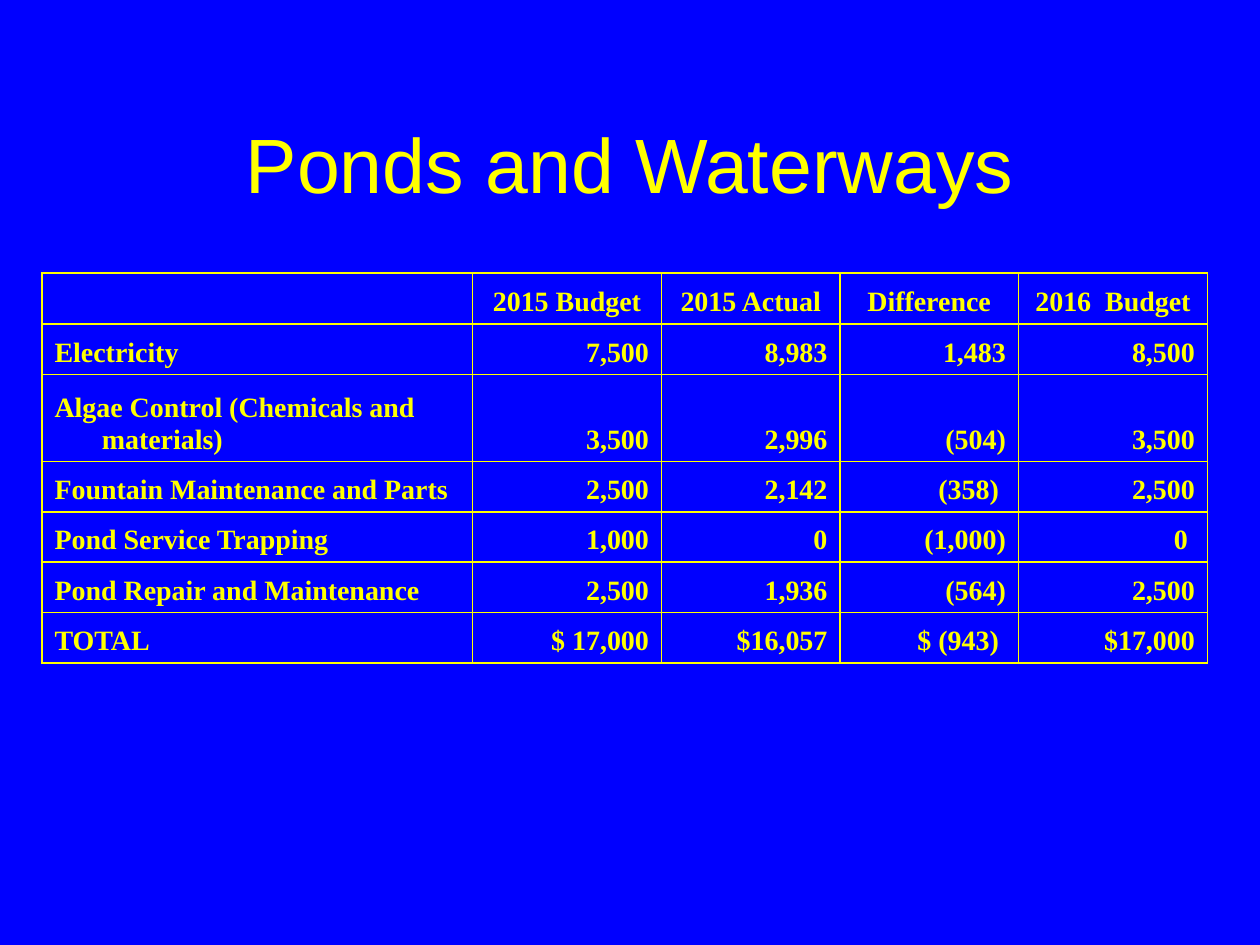
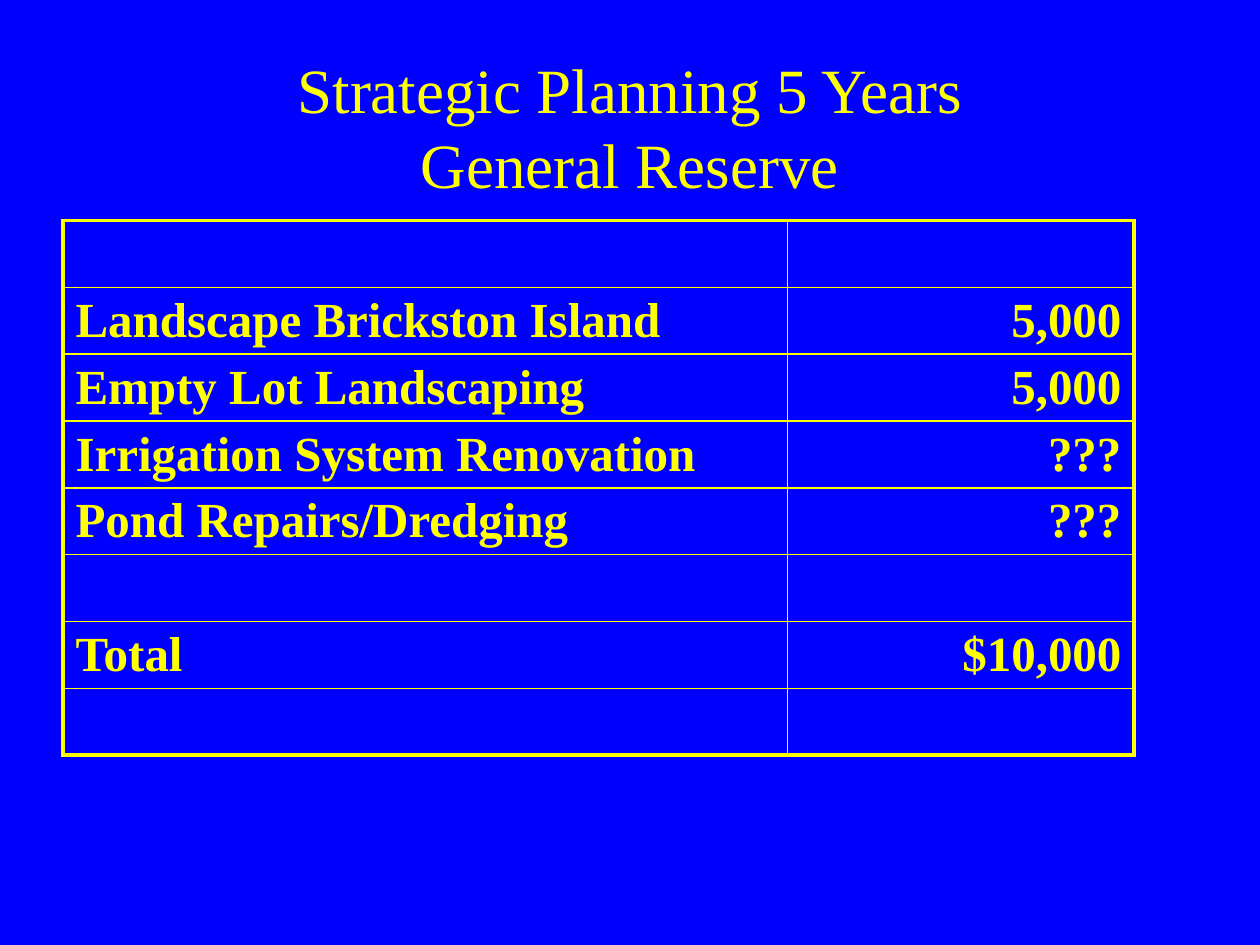
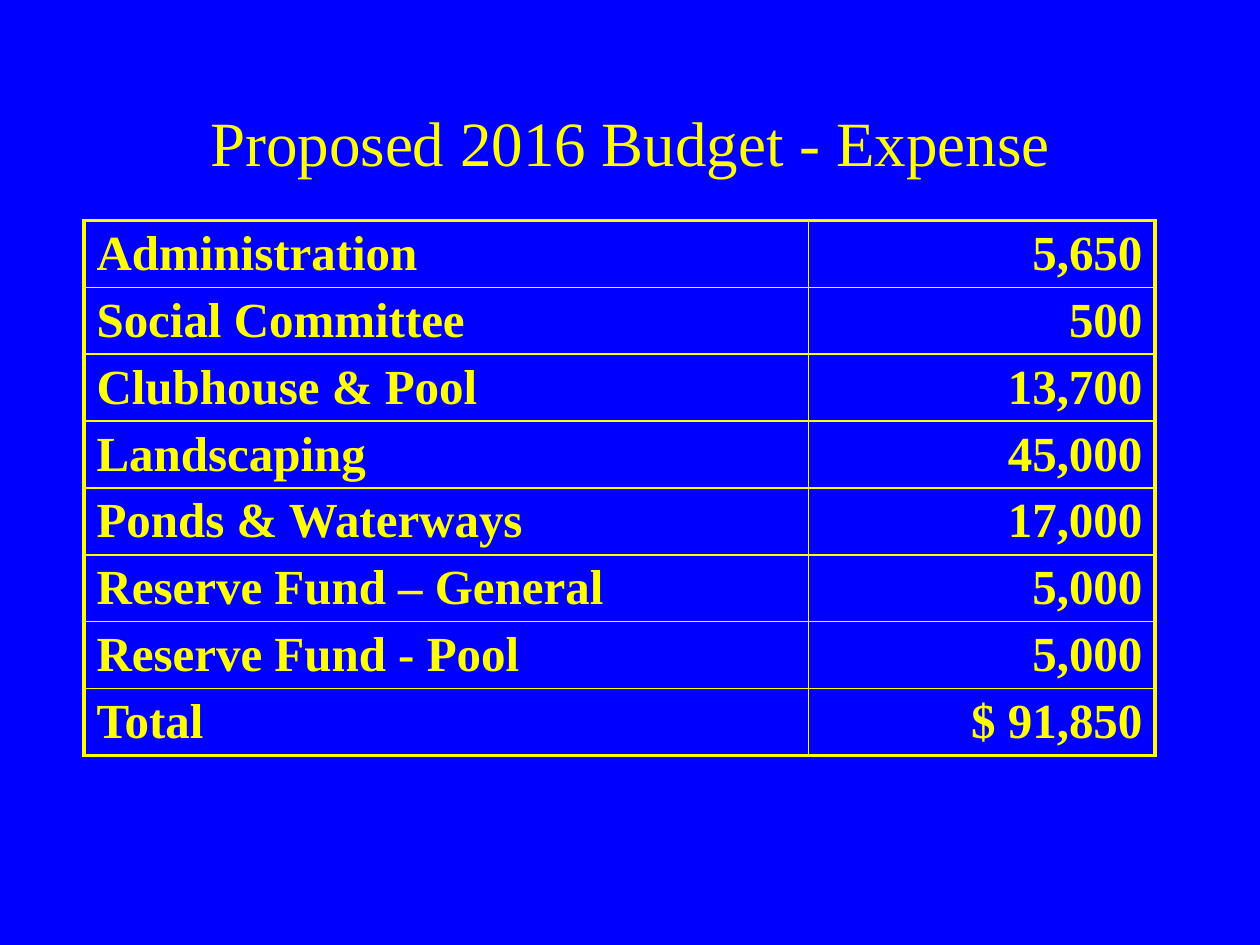
from dataclasses import dataclass

from lxml import etree
from pptx import Presentation
from pptx.dml.color import RGBColor
from pptx.enum.text import MSO_ANCHOR, PP_ALIGN
from pptx.oxml.ns import qn
from pptx.util import Pt

BLUE = RGBColor(0x00, 0x00, 0xFF)
YELLOW = RGBColor(0xFF, 0xFF, 0x00)
SANS = "Arial"
SERIF = "Times New Roman"
LEFT, CENTER, RIGHT = PP_ALIGN.LEFT, PP_ALIGN.CENTER, PP_ALIGN.RIGHT
TOP, MIDDLE, BOTTOM = MSO_ANCHOR.TOP, MSO_ANCHOR.MIDDLE, MSO_ANCHOR.BOTTOM
TITLE_ONLY = 5
THIN = 1
THICK = 2.25


@dataclass(frozen=True)
class Heading:
    lines: tuple[str, ...]
    top: float
    height: float
    size: float = 36
    font: str = SERIF


@dataclass(frozen=True)
class Ledger:
    left: float
    top: float
    columns: tuple[float, ...]
    row_heights: tuple[float, ...]
    entries: tuple[tuple[str, ...], ...]
    size: float = 28
    frame: float = THICK
    anchor: int = TOP
    hanging: float = 0
    has_header: bool = False


@dataclass(frozen=True)
class BudgetPage:
    heading: Heading
    ledger: Ledger


def reserve_ledger(left: float, entries: tuple[tuple[str, str], ...]) -> Ledger:
    return Ledger(left, 126, (414, 198), (38.16,) * len(entries), entries)


PAGES = (
    BudgetPage(
        Heading(("Ponds and Waterways",), 48, 90, 44, SANS),
        Ledger(
            24, 156, (246, 108, 102, 102, 108), (28.8, 28.8, 49.7) + (28.8,) * 4,
            (
                ("", "2015 Budget", "2015 Actual", "Difference", "2016  Budget"),
                ("Electricity", "7,500", "8,983", "1,483", "8,500"),
                ("Algae Control (Chemicals and materials)", "3,500", "2,996", "(504)", "3,500"),
                ("Fountain Maintenance and Parts", "2,500", "2,142", "(358) ", "2,500"),
                ("Pond Service Trapping", "1,000", "0", "(1,000)", "0 "),
                ("Pond Repair and Maintenance", "2,500", "1,936", "(564)", "2,500"),
                ("TOTAL", "$ 17,000", "$16,057", "$ (943) ", "$17,000"),
            ),
            size=16, frame=THIN, anchor=BOTTOM, hanging=27, has_header=True,
        ),
    ),
    BudgetPage(
        Heading(("Strategic Planning 5 Years", "General Reserve"), 30, 84),
        reserve_ledger(36, (
            ("", ""),
            ("Landscape Brickston Island", "5,000"),
            ("Empty Lot Landscaping", "5,000"),
            ("Irrigation System Renovation", "???"),
            ("Pond Repairs/Dredging", "???"),
            ("", ""),
            ("Total", "$10,000"),
            ("", ""),
        )),
    ),
    BudgetPage(
        Heading(("Proposed 2016 Budget - Expense",), 48, 66),
        reserve_ledger(48, (
            ("Administration", "5,650"),
            ("Social Committee", "500"),
            ("Clubhouse & Pool", "13,700"),
            ("Landscaping", "45,000"),
            ("Ponds & Waterways", "17,000"),
            ("Reserve Fund – General", "5,000"),
            ("Reserve Fund - Pool", "5,000"),
            ("Total", "$ 91,850"),
        )),
    ),
)


def add_run(paragraph, text: str, font: str, size: float, bold: bool = False) -> None:
    run = paragraph.add_run()
    run.text = text
    run.font.name = font
    run.font.size = Pt(size)
    run.font.bold = bold
    run.font.color.rgb = YELLOW


def draw_heading(slide, heading: Heading) -> None:
    title = slide.shapes.title
    title.left, title.top = Pt(54), Pt(heading.top)
    title.width, title.height = Pt(612), Pt(heading.height)
    title.text_frame.vertical_anchor = MIDDLE
    paragraph = title.text_frame.paragraphs[0]
    paragraph.alignment = CENTER
    for index, line in enumerate(heading.lines):
        if index:
            paragraph.add_line_break()
        add_run(paragraph, line, heading.font, heading.size)


def set_borders(cell, widths: dict[str, float]) -> None:
    properties = cell._tc.get_or_add_tcPr()
    for position, (side, width) in enumerate(widths.items()):
        line = etree.Element(qn(f"a:{side}"), w=str(Pt(width)))
        fill = etree.SubElement(line, qn("a:solidFill"))
        etree.SubElement(fill, qn("a:srgbClr"), val=str(YELLOW))
        properties.insert(position, line)


def draw_ledger(slide, ledger: Ledger) -> None:
    last_row, last_column = len(ledger.row_heights) - 1, len(ledger.columns) - 1
    table = slide.shapes.add_table(
        last_row + 1, last_column + 1, Pt(ledger.left), Pt(ledger.top),
        Pt(sum(ledger.columns)), Pt(sum(ledger.row_heights)),
    ).table
    table.first_row = table.horz_banding = False
    for column, width in zip(table.columns, ledger.columns):
        column.width = Pt(width)
    for row, height in zip(table.rows, ledger.row_heights):
        row.height = Pt(height)
    for r, entry in enumerate(ledger.entries):
        for c, text in enumerate(entry):
            cell = table.cell(r, c)
            cell.fill.background()
            cell.vertical_anchor = ledger.anchor
            set_borders(cell, {
                "lnL": ledger.frame if c == 0 else THIN,
                "lnR": ledger.frame if c == last_column else THIN,
                "lnT": ledger.frame if r == 0 else THIN,
                "lnB": ledger.frame if r == last_row else THIN,
            })
            if not text:
                continue
            paragraph = cell.text_frame.paragraphs[0]
            if c == 0:
                paragraph.alignment = LEFT
            else:
                paragraph.alignment = CENTER if ledger.has_header and r == 0 else RIGHT
            if ledger.hanging:
                indents = paragraph._p.get_or_add_pPr()
                indents.set("marL", str(Pt(ledger.hanging)))
                indents.set("indent", str(-Pt(ledger.hanging)))
            add_run(paragraph, text, SERIF, ledger.size, bold=True)


def main() -> None:
    deck = Presentation()
    deck.slide_width, deck.slide_height = Pt(720), Pt(540)
    background = deck.slide_master.background.fill
    background.solid()
    background.fore_color.rgb = BLUE
    for page in PAGES:
        slide = deck.slides.add_slide(deck.slide_layouts[TITLE_ONLY])
        draw_heading(slide, page.heading)
        draw_ledger(slide, page.ledger)
    deck.save("out.pptx")


if __name__ == "__main__":
    main()
